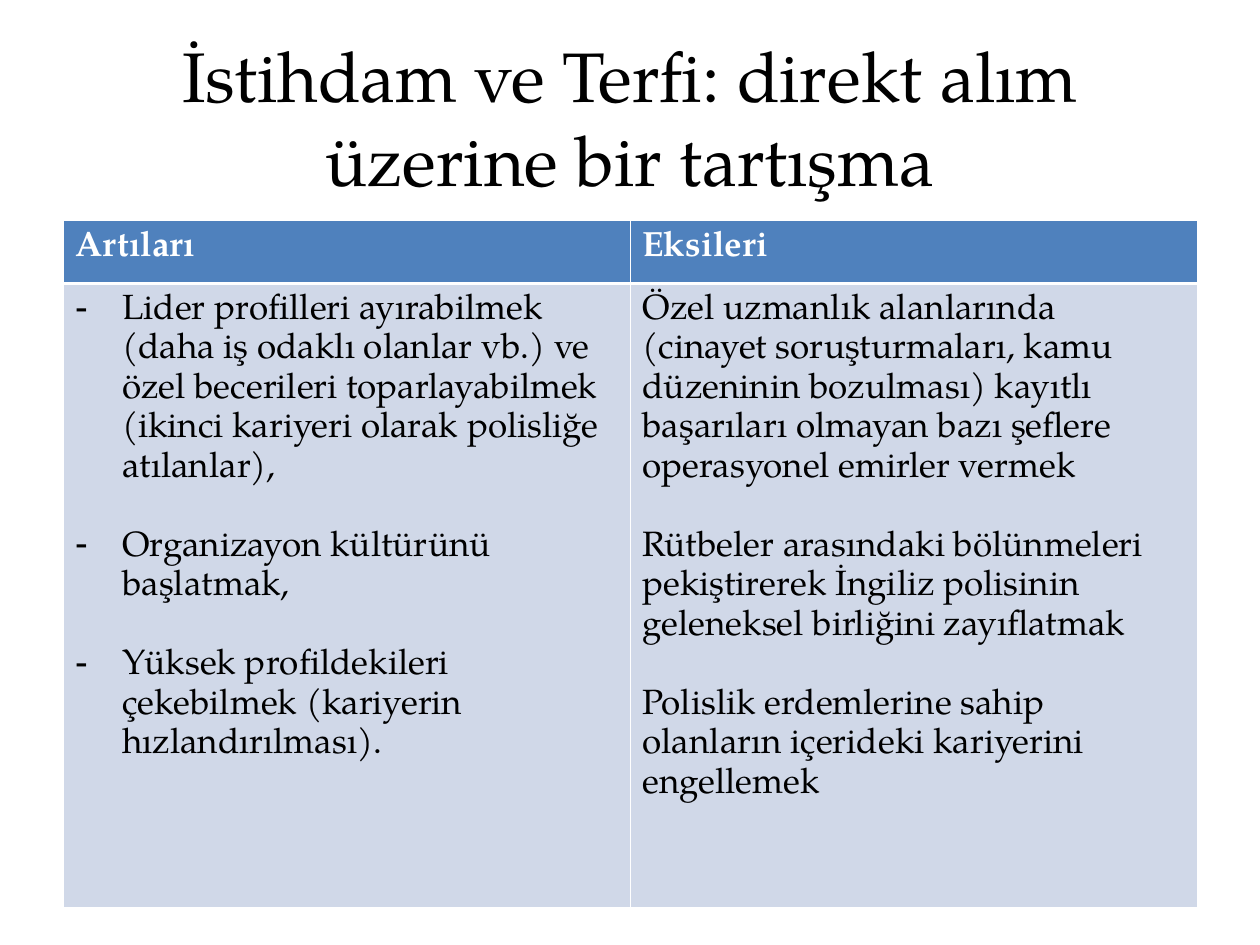
from lxml import etree
from pptx import Presentation
from pptx.dml.color import RGBColor
from pptx.enum.text import MSO_ANCHOR, PP_ALIGN
from pptx.oxml.ns import qn
from pptx.util import Inches, Pt

MIDDLE, TOP = MSO_ANCHOR.MIDDLE, MSO_ANCHOR.TOP
CENTER, LEFT = PP_ALIGN.CENTER, PP_ALIGN.LEFT

THEME = {
    "font": "TeX Gyre Pagella",
    "title": Pt(40), "body": Pt(20), "gap": Pt(22.6),
    "dark": "000000", "light": "FFFFFF",
    "head": "4F81BD", "cell": "D0D8E8",
    "thin": Pt(0.45), "thick": Pt(1.47),
}


def style(par, size, color, bold=False):
    form = {"name": THEME["font"], "size": size, "bold": bold}
    for run in par.runs:
        for key, val in form.items():
            setattr(run.font, key, val)
        run.font.color.rgb = RGBColor.from_string(color)


def border(cell, sides):
    props = cell._tc.get_or_add_tcPr()
    for spot, (side, width) in enumerate(sides.items()):
        line = etree.Element(qn("a:ln" + side), w=str(int(width)))
        fill = etree.SubElement(line, qn("a:solidFill"))
        etree.SubElement(fill, qn("a:srgbClr"), val=THEME["light"])
        props.insert(spot, line)


deck = Presentation()
deck.slide_width, deck.slide_height = Inches(10), Inches(7.5)
slide = deck.slides.add_slide(deck.slide_layouts[5])

# Title
title = slide.shapes.title
place = {"left": 0.5, "top": 0.21, "width": 9, "height": 1.43}
for key, val in place.items():
    setattr(title, key, Inches(val))
frame = title.text_frame
frame.text = "İstihdam ve Terfi: direkt alım üzerine bir tartışma"
frame.word_wrap = True
frame.vertical_anchor = MIDDLE
frame.paragraphs[0].alignment = CENTER
style(frame.paragraphs[0], THEME["title"], THEME["dark"])

# Pros and cons
pros = [
    "Lider profilleri ayırabilmek (daha iş odaklı olanlar vb.) ve özel "
    "becerileri toparlayabilmek (ikinci kariyeri olarak polisliğe atılanlar),",
    "Organizayon kültürünü başlatmak,",
    "Yüksek profildekileri çekebilmek (kariyerin hızlandırılması).",
]
cons = [
    "Özel uzmanlık alanlarında (cinayet soruşturmaları, kamu düzeninin "
    "bozulması) kayıtlı başarıları olmayan bazı şeflere operasyonel emirler "
    "vermek",
    "Rütbeler arasındaki bölünmeleri pekiştirerek İngiliz polisinin "
    "geleneksel birliğini zayıflatmak",
    "Polislik erdemlerine sahip olanların içerideki kariyerini engellemek",
]
rows = [[["Artıları"], ["Eksileri"]], [pros, cons]]

# Table
table = slide.shapes.add_table(
    2, 2, Inches(0.5), Inches(1.75), Inches(9), Inches(5.46)).table
table.horz_banding = False
for col in table.columns:
    col.width = Inches(4.5)
for row, high in zip(table.rows, (0.5, 4.95)):
    row.height = Inches(high)

for r, row in enumerate(rows):
    head = r == 0
    for c, items in enumerate(row):
        cell = table.cell(r, c)
        cell.vertical_anchor = TOP
        cell.fill.solid()
        cell.fill.fore_color.rgb = RGBColor.from_string(
            THEME["head" if head else "cell"])
        thin, thick = THEME["thin"], THEME["thick"]
        border(cell, {"L": thin, "R": thin,
                      "T": thin if head else thick,
                      "B": thick if head else thin})
        cell.text = "\n".join(items)
        for n, par in enumerate(cell.text_frame.paragraphs):
            par.alignment = LEFT
            par.line_spacing = 1.12
            if n:
                par.space_before = THEME["gap"]
            style(par, THEME["body"], THEME["light" if head else "dark"], head)
            # Dash bullets for the pros
            if items is pros:
                props = par._p.get_or_add_pPr()
                props.set("marL", str(Inches(0.37)))
                props.set("indent", str(-Inches(0.37)))
                tint = etree.SubElement(props, qn("a:buClr"))
                etree.SubElement(tint, qn("a:srgbClr"), val=THEME["dark"])
                etree.SubElement(props, qn("a:buChar"), char="-")

deck.save("out.pptx")
